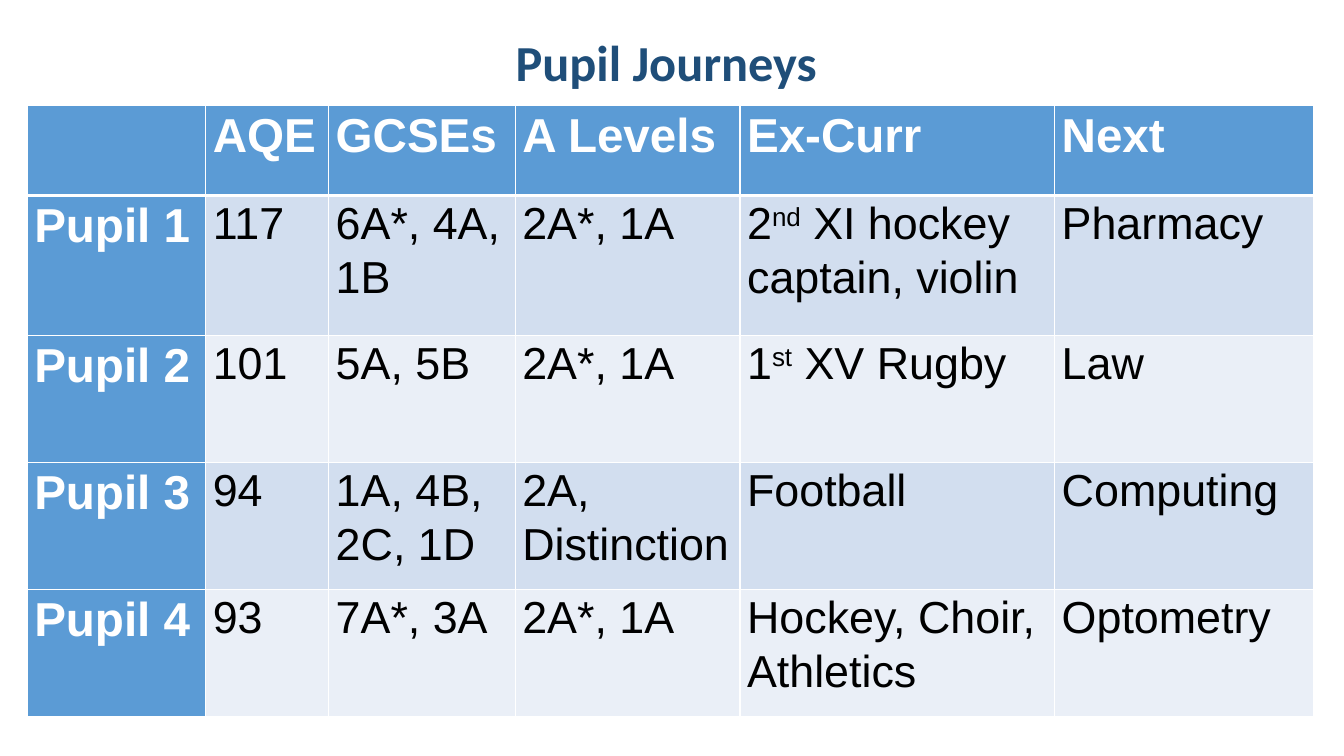
import pptx
import pptx.dml.color
import pptx.enum.text
import pptx.util
from lxml import etree
from pptx.oxml.ns import qn

RGBColor = pptx.dml.color.RGBColor
NAVY = RGBColor(0x1F, 0x4E, 0x79)
BLUE = RGBColor(0x5B, 0x9B, 0xD5)
BANDS = (RGBColor(0xD2, 0xDE, 0xEF), RGBColor(0xEA, 0xEF, 0xF7))
WHITE = RGBColor(0xFF, 0xFF, 0xFF)
BLACK = RGBColor(0, 0, 0)

# Column widths and row heights in percent of the slide
COLUMN_WIDTHS = (13.28, 9.15, 13.88, 16.73, 23.41, 19.28)
ROW_HEIGHTS = (11.87, 18.53, 16.8, 16.8, 16.8)

# Text between carets is raised
PUPILS = (
    ("", "AQE", "GCSEs", "A Levels", "Ex-Curr", "Next"),
    ("Pupil 1", "117", "6A*, 4A, 1B", "2A*, 1A", "2^nd^ XI hockey captain, violin", "Pharmacy"),
    ("Pupil 2", "101", "5A, 5B", "2A*, 1A", "1^st^ XV Rugby", "Law"),
    ("Pupil 3", "94", "1A, 4B, 2C, 1D", "2A, Distinction", "Football", "Computing"),
    ("Pupil 4", "93", "7A*, 3A", "2A*, 1A", "Hockey, Choir, Athletics", "Optometry"),
)


class SlideBuilder:
    """Holds the slide and its style; lengths are percent of the slide size."""

    title_font, table_font = "Calibri", "Arial"
    title_size, heading_size, body_size = 36, 34, 32

    def __init__(self, presentation):
        self.width = presentation.slide_width
        self.height = presentation.slide_height
        self.slide = presentation.slides.add_slide(presentation.slide_layouts[6])

    def across(self, percent):
        return round(self.width * percent / 100)

    def down(self, percent):
        return round(self.height * percent / 100)

    def add_text(self, paragraph, text, name, size, color, bold):
        for index, part in enumerate(text.split("^")):
            if part:
                run = paragraph.add_run()
                run.text = part
                if index % 2:
                    run._r.get_or_add_rPr().set("baseline", "30000")
        font = paragraph.font
        font.name, font.size, font.bold = name, pptx.util.Pt(size), bold
        font.color.rgb = color

    def title(self, text, left, top, width, height):
        shape = self.slide.shapes.add_textbox(
            self.across(left), self.down(top), self.across(width), self.down(height))
        frame = shape.text_frame
        frame.word_wrap = True
        frame.vertical_anchor = pptx.enum.text.MSO_ANCHOR.MIDDLE
        paragraph = frame.paragraphs[0]
        paragraph.alignment = pptx.enum.text.PP_ALIGN.CENTER
        paragraph.line_spacing = 0.9
        self.add_text(paragraph, text, self.title_font, self.title_size, NAVY, True)

    def borders(self, cell, top, bottom):
        properties = cell._tc.get_or_add_tcPr()
        sides = (("a:lnL", 1), ("a:lnR", 1), ("a:lnT", top), ("a:lnB", bottom))
        for index, (tag, points) in enumerate(sides):
            line = etree.Element(qn(tag), w=str(int(pptx.util.Pt(points))))
            fill = etree.SubElement(line, qn("a:solidFill"))
            etree.SubElement(fill, qn("a:srgbClr"), val=str(WHITE))
            properties.insert(index, line)

    def cell(self, cell, text, heading, fill):
        cell.margin_left = cell.margin_right = pptx.util.Inches(0.07)
        cell.margin_top = cell.margin_bottom = 0
        cell.fill.solid()
        cell.fill.fore_color.rgb = fill
        paragraph = cell.text_frame.paragraphs[0]
        paragraph.line_spacing = 1.07
        size, color = (self.heading_size, WHITE) if heading else (self.body_size, BLACK)
        self.add_text(paragraph, text, self.table_font, size, color, heading)

    def table(self, rows, left, top):
        table = self.slide.shapes.add_table(
            len(rows), len(COLUMN_WIDTHS), self.across(left), self.down(top),
            self.across(sum(COLUMN_WIDTHS)), self.down(sum(ROW_HEIGHTS))).table
        for column, width in zip(table.columns, COLUMN_WIDTHS):
            column.width = self.across(width)
        for row, height in zip(table.rows, ROW_HEIGHTS):
            row.height = self.down(height)
        for r, values in enumerate(rows):
            for c, text in enumerate(values):
                heading = r == 0 or c == 0
                fill = BLUE if heading else BANDS[(r - 1) % 2]
                self.cell(table.cell(r, c), text, heading, fill)
                self.borders(table.cell(r, c), 3 if r == 1 else 1, 3 if r == 0 else 1)


def main():
    presentation = pptx.Presentation()
    presentation.slide_width = pptx.util.Inches(13.33)
    presentation.slide_height = pptx.util.Inches(7.5)
    builder = SlideBuilder(presentation)
    # Heading
    builder.title("Pupil Journeys ", 6.98, 3.2, 86.05, 10.93)
    # Results by pupil
    builder.table(PUPILS, 2.03, 14)
    presentation.save("out.pptx")


if __name__ == "__main__":
    main()
